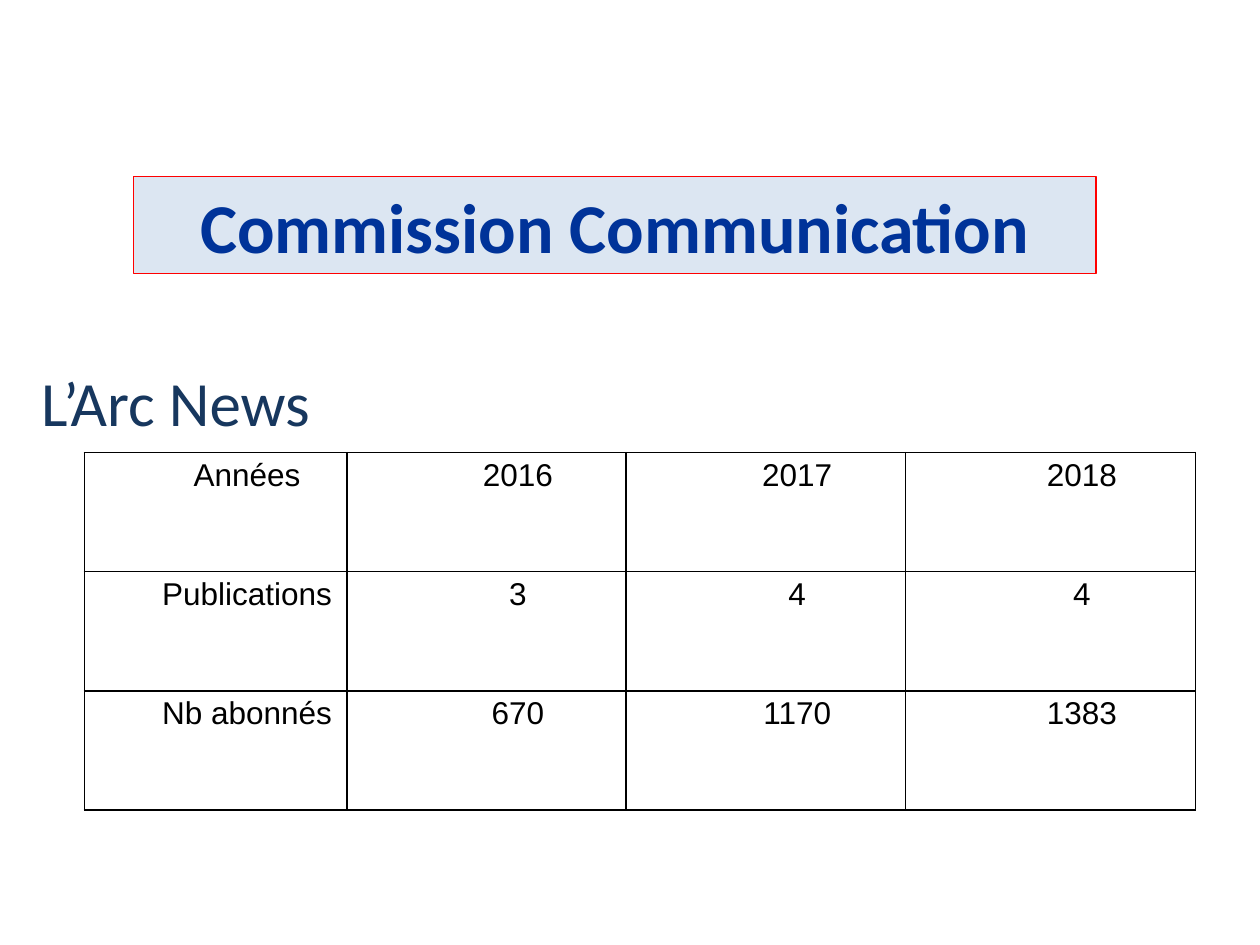
from lxml.etree import SubElement
from pptx import Presentation
from pptx.dml.color import RGBColor
from pptx.enum.text import MSO_ANCHOR, PP_ALIGN
from pptx.oxml.ns import qn
from pptx.util import Pt

COLORS = {
    "title": "003399",
    "title_fill": "DCE6F2",
    "title_line": "FF0000",
    "newsletter": "17375E",
    "table": "000000",
}


def write(frame, text, *, size, font, color, bold=False, indent=0, spacing=None):
    frame.word_wrap = True
    paragraph = frame.paragraphs[0]
    paragraph.alignment = PP_ALIGN.CENTER
    paragraph.line_spacing = spacing
    if indent:
        properties = paragraph._p.get_or_add_pPr()
        properties.set("marL", str(Pt(indent)))
        properties.set("indent", "0")
    run = paragraph.add_run()
    run.text = text
    run.font.size = Pt(size)
    run.font.name = font
    run.font.bold = bold
    run.font.color.rgb = RGBColor.from_string(COLORS[color])


def add_borders(cell, color, width):
    properties = cell._tc.get_or_add_tcPr()
    for position, side in enumerate(("lnL", "lnR", "lnT", "lnB")):
        line = SubElement(properties, qn(f"a:{side}"), w=str(Pt(width)))
        fill = SubElement(line, qn("a:solidFill"))
        SubElement(fill, qn("a:srgbClr"), val=COLORS[color])
        properties.insert(position, line)


prs = Presentation()
prs.slide_width, prs.slide_height = Pt(720), Pt(540)
slide = prs.slides.add_slide(prs.slide_layouts[5])

title = slide.shapes.title
title.left, title.top, title.width, title.height = Pt(76.3), Pt(100.8), Pt(550), Pt(55.7)
title.fill.solid()
title.fill.fore_color.rgb = RGBColor.from_string(COLORS["title_fill"])
title.line.color.rgb = RGBColor.from_string(COLORS["title_line"])
title.line.width = Pt(0.75)
title.text_frame.vertical_anchor = MSO_ANCHOR.MIDDLE
write(title.text_frame, "Commission Communication",
      size=40, font="Calibri", color="title", bold=True)

newsletter = slide.shapes.add_textbox(Pt(0), Pt(204), Pt(200.6), Pt(51))
write(newsletter.text_frame, "L’Arc News", size=36, font="Calibri", color="newsletter")

figures = [
    ["Années", "2016", "2017", "2018"],
    ["Publications", "3", "4", "4"],
    ["Nb abonnés", "670", "1170", "1383"],
]
column_widths = [150, 159.6, 159.6, 165.8]
row_height = 68.1
table = slide.shapes.add_table(
    len(figures), len(column_widths), Pt(48.2), Pt(258.6),
    Pt(sum(column_widths)), Pt(row_height * len(figures))).table
table.first_row = table.horz_banding = False

for column, width in zip(table.columns, column_widths):
    column.width = Pt(width)

for row, values in zip(table.rows, figures):
    row.height = Pt(row_height)
    for cell, value in zip(row.cells, values):
        cell.margin_left = cell.margin_right = Pt(5)
        cell.margin_top = cell.margin_bottom = Pt(0)
        cell.fill.background()
        add_borders(cell, "table", 1)
        write(cell.text_frame, value, size=18, font="Arial", color="table",
              indent=36, spacing=1.15)

prs.save("out.pptx")
